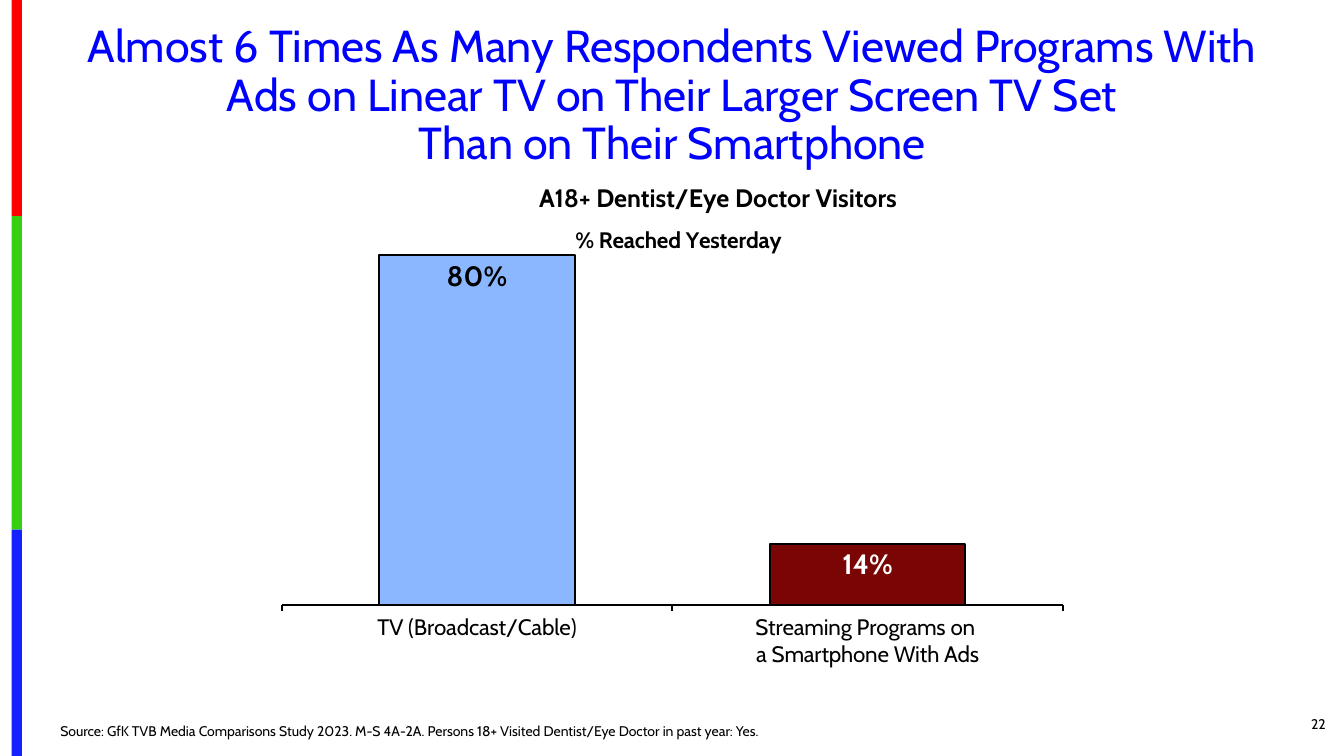
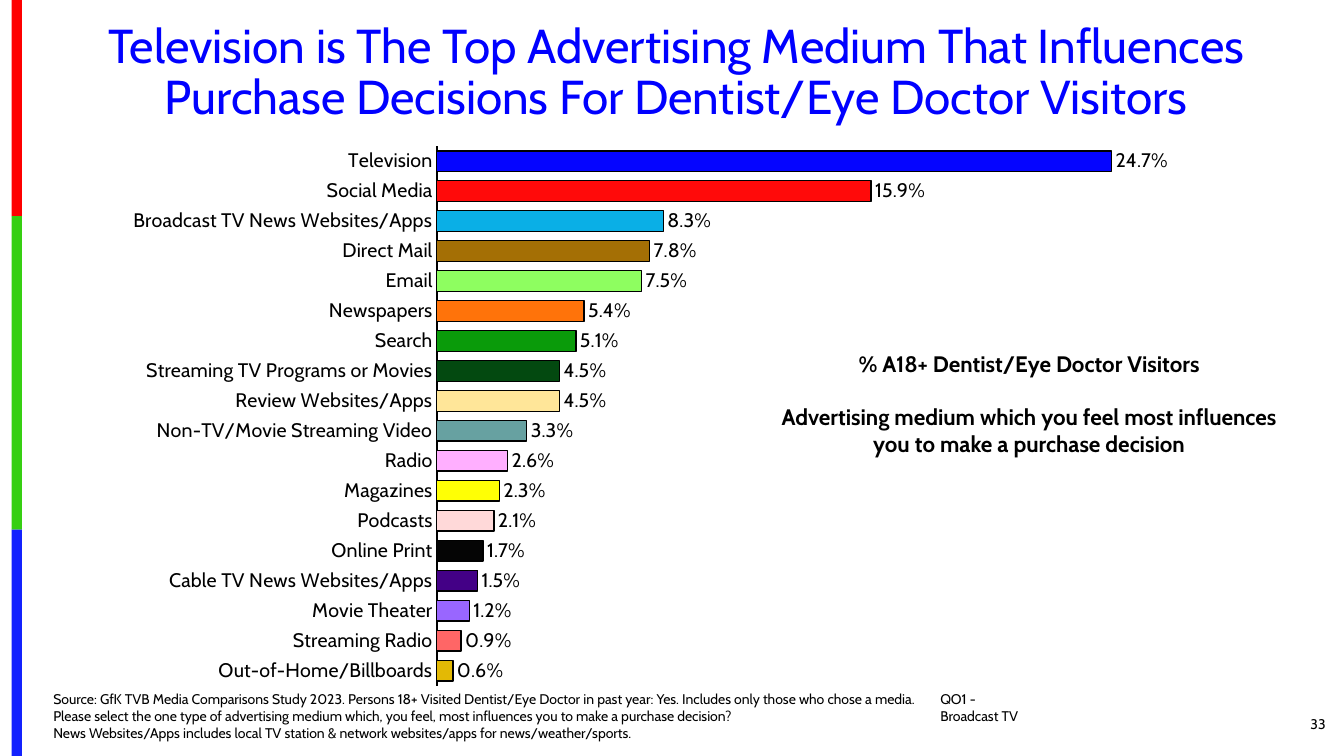
"""Build two slides about the media reach and influence of dentist and eye doctor visitors."""
from lxml.etree import SubElement
from pptx import Presentation
from pptx.chart.data import CategoryChartData
from pptx.dml.color import RGBColor
from pptx.enum.chart import XL_CHART_TYPE, XL_LABEL_POSITION, XL_TICK_LABEL_POSITION, XL_TICK_MARK
from pptx.enum.shapes import MSO_SHAPE
from pptx.enum.text import MSO_ANCHOR, PP_ALIGN
from pptx.oxml.ns import qn
from pptx.util import Inches, Pt

FONT = "Cabin"
COLORS = {
    "title": "0000FF", "text": "000000", "light": "FFFFFF",
    "red band": "FE0000", "green band": "36CF12", "blue band": "1322FE",
}
BANDS = [("red band", 0, 8.58), ("green band", 8.58, 21.02), ("blue band", 21.02, 30)]

deck = Presentation()
deck.slide_width, deck.slide_height = Inches(13.33), Inches(7.5)
COLUMN = deck.slide_width / 40
ROW = deck.slide_height / 30


def add_text(page, place, lines, size, color="text", bold=False, align=PP_ALIGN.LEFT,
             anchor=MSO_ANCHOR.TOP, spacing=1.0, gap=0, tabs=()):
    """Add a text box at a grid place, with one paragraph per line."""
    left, top, width, height = place
    box = page.shapes.add_textbox(int(left * COLUMN), int(top * ROW),
                                  int(width * COLUMN), int(height * ROW))
    frame = box.text_frame
    frame.word_wrap = True
    frame.vertical_anchor = anchor
    frame.text = "\n".join(lines)
    for index, para in enumerate(frame.paragraphs):
        para.alignment = align
        para.line_spacing = spacing
        if index and gap:
            para.space_before = Pt(gap)
        if tabs:
            stops = SubElement(para._p.get_or_add_pPr(), qn("a:tabLst"))
            for stop in tabs:
                SubElement(stops, qn("a:tab"), pos=str(int(stop * COLUMN)), algn="l")
        para.font.name = FONT
        para.font.size = Pt(size)
        para.font.bold = bold
        para.font.color.rgb = RGBColor.from_string(COLORS[color])


def set_layout(parent, **shares):
    """Place a chart part by shares of the chart's size."""
    layout = parent.find(qn("c:layout"))
    if layout is None:
        layout = SubElement(parent, qn("c:layout"))
        parent.insert(0, layout)
    manual = SubElement(layout, qn("c:manualLayout"))
    if "w" in shares:
        SubElement(manual, qn("c:layoutTarget"), val="inner")
    for mode in ("xMode", "yMode"):
        SubElement(manual, qn(f"c:{mode}"), val="edge")
    for side, share in shares.items():
        SubElement(manual, qn(f"c:{side}"), val=str(share))


REACH = [
    ("TV (Broadcast/Cable)", 0.8, "8AB7FF", "text"),
    ("Streaming Programs on \na Smartphone With Ads", 0.14, "790505", "light"),
]
INFLUENCE = [
    ("Television", 0.247, "0505FF", "text"),
    ("Social Media", 0.159, "FF0A0A", "text"),
    ("Broadcast TV News Websites/Apps", 0.083, "0AAFE6", "text"),
    ("Direct Mail", 0.078, "A46F05", "text"),
    ("Email", 0.075, "8EFE60", "text"),
    ("Newspapers", 0.054, "FF730A", "text"),
    ("Search", 0.051, "0A9B0A", "text"),
    ("Streaming TV Programs or Movies", 0.045, "034910", "text"),
    ("Review Websites/Apps", 0.045, "FFE699", "text"),
    ("Non-TV/Movie Streaming Video", 0.033, "67A1A1", "text"),
    ("Radio", 0.026, "FFAFFF", "text"),
    ("Magazines", 0.023, "FFFF05", "text"),
    ("Podcasts", 0.021, "FFD9D9", "text"),
    ("Online Print", 0.017, "050505", "text"),
    ("Cable TV News Websites/Apps", 0.015, "430086", "text"),
    ("Movie Theater", 0.012, "9966FF", "text"),
    ("Streaming Radio", 0.009, "FF6666", "text"),
    ("Out-of-Home/Billboards", 0.006, "E3B905", "text"),
]

SLIDES = [
    {
        "number": "22",
        "title": "Almost 6 Times As Many Respondents Viewed Programs With Ads on Linear TV "
                 "on Their Larger Screen TV Set\vThan on Their Smartphone",
        "title place": (1.38, 0.76, 37.27, 6.24), "title size": 32,
        "bars": REACH, "kind": XL_CHART_TYPE.COLUMN_CLUSTERED,
        "chart place": (8, 6.4, 24, 23.48), "chart title": "% Reached Yesterday",
        "plot": {"x": 0.016, "y": 0.085, "w": 0.969, "h": 0.665},
        "maximum": 0.9, "gap": 100, "outline": 1.5, "reverse": False,
        "tick": XL_TICK_MARK.OUTSIDE, "axis size": 16,
        "format": "0%", "label size": 20, "label bold": True,
        "label position": XL_LABEL_POSITION.INSIDE_END,
        "note": ["A18+ Dentist/Eye Doctor Visitors"],
        "note place": (7, 7.04, 28.75, 1.6), "note size": 18,
        "source": ["Source: GfK TVB Media Comparisons Study 2023. M-S 4A-2A. "
                   "Persons 18+ Visited Dentist/Eye Doctor in past year: Yes."],
        "source place": (1.5, 28.56, 28, 1), "source spacing": 0.9, "source tabs": (),
    },
    {
        "number": "33",
        "title": "Television is The Top Advertising Medium That Influences "
                 "Purchase Decisions For Dentist/Eye Doctor Visitors",
        "title place": (1, 0.68, 38.26, 4.52), "title size": 34,
        "bars": INFLUENCE, "kind": XL_CHART_TYPE.BAR_CLUSTERED,
        "chart place": (1.38, 5.16, 36.64, 22.16), "chart title": None,
        "plot": {"x": 0.317, "y": 0.029, "w": 0.666, "h": 0.966},
        "maximum": 0.3, "gap": 45, "outline": 1, "reverse": True,
        "tick": XL_TICK_MARK.NONE, "axis size": 14,
        "format": "0.0%", "label size": 14, "label bold": False,
        "label position": XL_LABEL_POSITION.OUTSIDE_END,
        "note": ["% A18+ Dentist/Eye Doctor Visitors",
                 "Advertising medium which you feel most influences you to make a purchase decision"],
        "note place": (22.5, 13.68, 16.26, 5.8), "note size": 16,
        "source": ["Source: GfK TVB Media Comparisons Study 2023. Persons 18+ Visited Dentist/Eye "
                   "Doctor in past year: Yes. Includes only those who chose a media.\tQO1 -",
                   "Please select the one type of advertising medium which, you feel, "
                   "most influences you to make a purchase decision?\tBroadcast TV",
                   "News Websites/Apps includes local TV station & network websites/apps "
                   "for news/weather/sports."],
        "source place": (1.29, 27.16, 30.21, 2.44), "source spacing": 1.0,
        "source tabs": (26.4, 28.15),
    },
]

for content in SLIDES:
    page = deck.slides.add_slide(deck.slide_layouts[6])
    for name, start, end in BANDS:
        band = page.shapes.add_shape(MSO_SHAPE.RECTANGLE, int(0.35 * COLUMN), int(start * ROW),
                                     int(0.3 * COLUMN), int((end - start) * ROW))
        band.shadow.inherit = False
        band.fill.solid()
        band.fill.fore_color.rgb = RGBColor.from_string(COLORS[name])
        band.line.fill.background()

    categories, values, fills, label_colors = zip(*content["bars"])
    data = CategoryChartData(number_format=content["format"])
    data.categories = categories
    data.add_series("Series 1", values)
    left, top, width, height = content["chart place"]
    chart = page.shapes.add_chart(content["kind"], int(left * COLUMN), int(top * ROW),
                                  int(width * COLUMN), int(height * ROW), data).chart
    chart.has_legend = False
    chart.font.name = FONT
    chart.font.size = Pt(10)
    chart.font.color.rgb = RGBColor.from_string(COLORS["text"])
    set_layout(chart.element.find(".//" + qn("c:plotArea")), **content["plot"])
    chart.has_title = content["chart title"] is not None
    if chart.has_title:
        heading = chart.chart_title
        heading.text_frame.text = content["chart title"]
        heading_font = heading.text_frame.paragraphs[0].font
        heading_font.name = FONT
        heading_font.size = Pt(16)
        heading_font.bold = True
        set_layout(heading.element, x=0.375, y=0.1)

    value_axis = chart.value_axis
    value_axis.visible = False
    value_axis.has_major_gridlines = False
    value_axis.minimum_scale = 0
    value_axis.maximum_scale = content["maximum"]
    category_axis = chart.category_axis
    category_axis.reverse_order = content["reverse"]
    category_axis.major_tick_mark = content["tick"]
    category_axis.minor_tick_mark = XL_TICK_MARK.NONE
    category_axis.tick_label_position = XL_TICK_LABEL_POSITION.NEXT_TO_AXIS
    category_axis.tick_labels.font.size = Pt(content["axis size"])
    category_axis.format.line.width = Pt(1.5)
    category_axis.format.line.color.rgb = RGBColor.from_string(COLORS["text"])

    plot = chart.plots[0]
    plot.gap_width = content["gap"]
    plot.vary_by_categories = False
    series = plot.series[0]
    labels = series.data_labels
    labels.show_value = True
    labels.number_format = content["format"]
    labels.number_format_is_linked = False
    labels.position = content["label position"]
    labels.font.size = Pt(content["label size"])
    labels.font.bold = content["label bold"]
    labels.font.color.rgb = RGBColor.from_string(COLORS["text"])
    for index, (fill, label_color) in enumerate(zip(fills, label_colors)):
        point = series.points[index]
        point.format.fill.solid()
        point.format.fill.fore_color.rgb = RGBColor.from_string(fill)
        point.format.line.width = Pt(content["outline"])
        point.format.line.color.rgb = RGBColor.from_string(COLORS["text"])
        if label_color != "text":
            label = point.data_label
            label.position = content["label position"]
            label.font.size = Pt(content["label size"])
            label.font.bold = content["label bold"]
            label.font.color.rgb = RGBColor.from_string(COLORS[label_color])

    add_text(page, content["title place"], [content["title"]], content["title size"],
             color="title", align=PP_ALIGN.CENTER, spacing=0.9)
    add_text(page, content["note place"], content["note"], content["note size"],
             bold=True, align=PP_ALIGN.CENTER, gap=19)
    add_text(page, content["source place"], content["source"], 10, anchor=MSO_ANCHOR.BOTTOM,
             spacing=content["source spacing"], tabs=content["source tabs"])
    add_text(page, (36.5, 27.92, 3.25, 1.6), [content["number"]], 10,
             align=PP_ALIGN.RIGHT, anchor=MSO_ANCHOR.MIDDLE)

deck.save("out.pptx")
